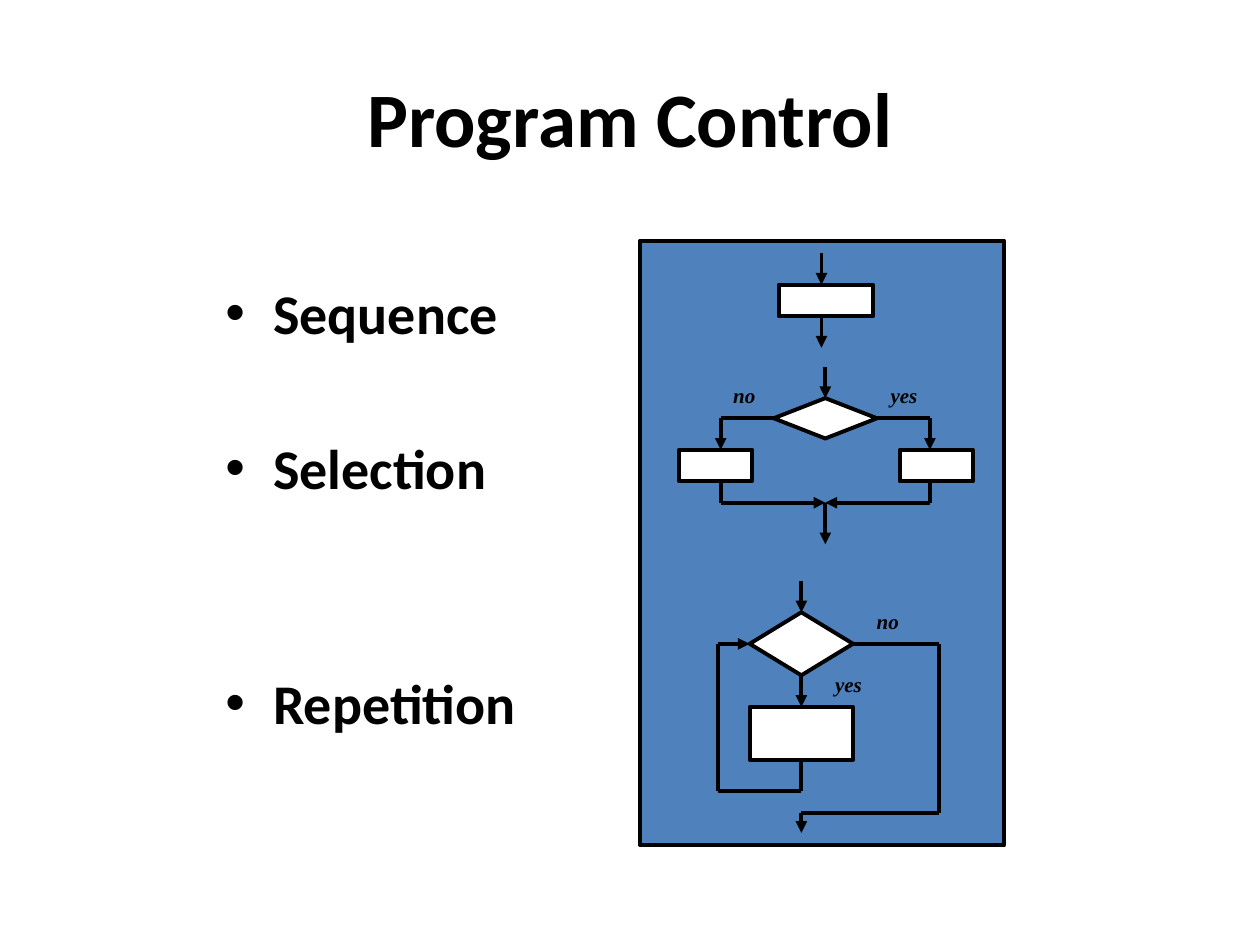
from dataclasses import dataclass
from lxml import etree
from pptx import Presentation
from pptx import util as u
from pptx.dml.color import RGBColor
from pptx.enum import shapes, text
from pptx.oxml.ns import qn


@dataclass(frozen=True)
class Theme:
    ink: str = "000000"
    paper: str = "FFFFFF"
    panel: str = "4F81BD"
    font: str = "Calibri"
    serif: str = "Times New Roman"
    head: int = 44
    body: int = 32
    note: int = 12
    line: float = 2.25


class Board:
    def __init__(self, slide, theme):
        self.slide = slide
        self.theme = theme

    def run(self, para, words, size, font, slant=False):
        run = para.add_run()
        run.text = words
        run.font.size = u.Pt(size)
        run.font.name = font
        run.font.bold = True
        run.font.italic = slant
        run.font.color.rgb = RGBColor.from_string(self.theme.ink)

    def title(self, words, *box):
        shape = self.slide.shapes.title
        shape.left, shape.top, shape.width, shape.height = map(u.Inches, box)
        frame = shape.text_frame
        frame.vertical_anchor = text.MSO_ANCHOR.MIDDLE
        para = frame.paragraphs[0]
        para.alignment = text.PP_ALIGN.CENTER
        self.run(para, words, self.theme.head, self.theme.font)

    def frame(self, *box):
        shape = self.slide.shapes.add_textbox(*map(u.Inches, box))
        shape.text_frame.word_wrap = True
        return shape.text_frame

    def bullets(self, items, *box):
        frame = self.frame(*box)
        for i, (words, gap) in enumerate(items):
            para = frame.add_paragraph() if i else frame.paragraphs[0]
            para.space_before = u.Pt(gap)
            props = para._p.get_or_add_pPr()
            props.set("marL", str(u.Inches(0.38)))
            props.set("indent", str(u.Inches(-0.38)))
            etree.SubElement(props, qn("a:buFont")).set("typeface", "Arial")
            etree.SubElement(props, qn("a:buChar")).set("char", "•")
            self.run(para, words, self.theme.body, self.theme.font)

    def label(self, words, left, top):
        para = self.frame(left, top, 0.58, 0.3).paragraphs[0]
        self.run(para, words, self.theme.note, self.theme.serif, True)

    def block(self, kind, *box, fill=None):
        shape = self.slide.shapes.add_shape(kind, *map(u.Inches, box))
        shape.shadow.inherit = False
        shape.fill.solid()
        shape.fill.fore_color.rgb = RGBColor.from_string(fill or self.theme.paper)
        shape.line.color.rgb = RGBColor.from_string(self.theme.ink)
        shape.line.width = u.Pt(self.theme.line)
        return shape

    def route(self, *points, start=None, end=None, arrow=True):
        last = len(points) - 2
        for i, (a, b) in enumerate(zip(points, points[1:])):
            wire = self.slide.shapes.add_connector(
                shapes.MSO_CONNECTOR.STRAIGHT, *map(u.Inches, (*a, *b)))
            wire.line.color.rgb = RGBColor.from_string(self.theme.ink)
            wire.line.width = u.Pt(self.theme.line)
            if i == 0 and start:
                wire.begin_connect(*start)
            if i == last and end:
                wire.end_connect(*end)
            if i == last and arrow:
                line = wire.line._get_or_add_ln()
                etree.SubElement(line, qn("a:tailEnd")).set("type", "triangle")
            etree.SubElement(wire._element.spPr, qn("a:effectLst"))


def sequence(board):
    x = 6.52
    board.block(shapes.MSO_SHAPE.FLOWCHART_PROCESS, 6.18, 2.26, 0.75, 0.25)
    for top in (2.01, 2.51):
        board.route((x, top), (x, top + 0.25))


def selection(board):
    mid, row, join = 6.55, 3.32, 3.99
    test = board.block(shapes.MSO_SHAPE.FLOWCHART_DECISION, mid - 0.41, row - 0.16, 0.82, 0.32)
    board.route((mid, 2.91), (mid, row - 0.16), end=(test, 0))
    for words, sign, left, side in (("no", -1, 5.39, 1), ("yes", 1, 7.14, 3)):
        x = mid + sign * 0.83
        board.block(shapes.MSO_SHAPE.FLOWCHART_PROCESS, left, 3.57, 0.58, 0.25)
        board.route((mid + sign * 0.41, row), (x, row), (x, 3.57), start=(test, side))
        board.route((x, 3.82), (x, join), (mid, join))
        board.label(words, 5.72 if sign < 0 else 6.97, 2.99)
    board.route((mid, join), (mid, 4.32))


def loop(board):
    mid, row, back, out = 6.36, 5.11, 5.7, 7.45
    left, wide = mid - 0.41, 0.82
    test = board.block(shapes.MSO_SHAPE.FLOWCHART_DECISION, left, 4.86, wide, 0.5)
    work = board.block(shapes.MSO_SHAPE.FLOWCHART_PROCESS, left, 5.61, wide, 0.42)
    board.route((mid, 4.61), (mid, 4.86), end=(test, 0))
    board.route((mid, 5.36), (mid, 5.61), start=(test, 2), end=(work, 0))
    board.route((mid, 6.03), (mid, 6.28), (back, 6.28), (back, row), (left, row),
                start=(work, 2), end=(test, 1))
    board.route((left + wide, row), (out, row), (out, 6.45), (mid, 6.45), (mid, 6.61),
                start=(test, 3))
    board.label("yes", 6.53, 5.28)
    board.label("no", 6.86, 4.78)


def main():
    deck = Presentation()
    deck.slide_width, deck.slide_height = u.Inches(10), u.Inches(7.5)
    theme = Theme()
    board = Board(deck.slides.add_slide(deck.slide_layouts[5]), theme)
    board.title("Program Control", 0.5, 0.3, 9, 1.25)
    board.bullets((("Sequence", 0), ("Selection", 50.5), ("Repetition", 95.5)),
                  1.69, 2.16, 3.08, 4.43)
    board.block(shapes.MSO_SHAPE.RECTANGLE, 5.08, 1.91, 2.89, 4.8, fill=theme.panel)
    sequence(board)
    selection(board)
    loop(board)
    deck.save("out.pptx")


if __name__ == "__main__":
    main()
